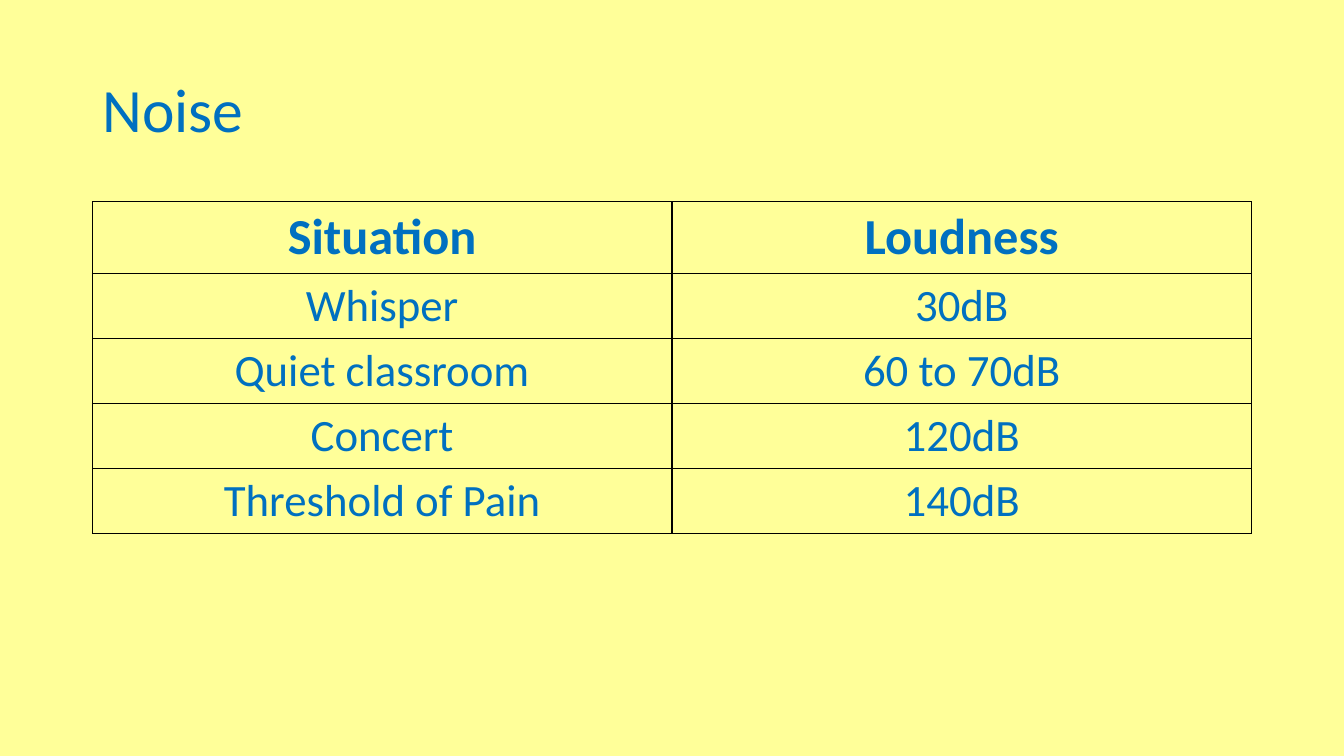
from lxml.etree import SubElement
from pptx import Presentation
from pptx.dml.color import RGBColor
from pptx.enum.text import MSO_ANCHOR, MSO_AUTO_SIZE, PP_ALIGN
from pptx.oxml.ns import qn
from pptx.util import Pt

EMU_PER_PX = 9525
COLORS = {"background": "FFFF99", "text": "0070C0", "border": "000000"}
LOUDNESS_ROWS = [
    ("Situation", "Loudness"),
    ("Whisper", "30dB"),
    ("Quiet classroom", "60 to 70dB"),
    ("Concert", "120dB"),
    ("Threshold of Pain", "140dB"),
]


def px(length):
    return length * EMU_PER_PX


class SlideBuilder:
    font = "Calibri"

    def __init__(self, deck):
        self.page = deck.slides.add_slide(deck.slide_layouts[5])
        fill = self.page.background.fill
        fill.solid()
        fill.fore_color.rgb = RGBColor.from_string(COLORS["background"])

    def add_text(self, para, text, size, align, bold=False):
        para.alignment = align
        span = para.add_run()
        span.text = text
        span.font.name = self.font
        span.font.size = Pt(size)
        span.font.bold = bold
        span.font.color.rgb = RGBColor.from_string(COLORS["text"])

    def title(self, text, left, top, width, height):
        box = self.page.shapes.title
        box.left, box.top = px(left), px(top)
        box.width, box.height = px(width), px(height)
        frame = box.text_frame
        frame.word_wrap = True
        frame.auto_size = MSO_AUTO_SIZE.NONE
        frame.vertical_anchor = MSO_ANCHOR.MIDDLE
        para = frame.paragraphs[0]
        para.line_spacing = 0.9
        self.add_text(para, text, 44, PP_ALIGN.LEFT)

    def border(self, cell):
        properties = cell._tc.get_or_add_tcPr()
        for index, side in enumerate(("lnL", "lnR", "lnT", "lnB")):
            line = SubElement(properties, qn(f"a:{side}"), w=str(Pt(1)))
            fill = SubElement(line, qn("a:solidFill"))
            SubElement(fill, qn("a:srgbClr"), val=COLORS["border"])
            properties.insert(index, line)

    def table(self, rows, left, top, width, header_height, row_height):
        heights = [header_height] + [row_height] * (len(rows) - 1)
        columns = len(rows[0])
        table = self.page.shapes.add_table(
            len(rows), columns, px(left), px(top), px(width), px(sum(heights))
        ).table
        table.first_row = False
        table.horz_banding = False
        for column in table.columns:
            column.width = px(width // columns)
        for row_index, (texts, height) in enumerate(zip(rows, heights)):
            table.rows[row_index].height = px(height)
            header = row_index == 0
            for column_index, text in enumerate(texts):
                cell = table.cell(row_index, column_index)
                cell.fill.background()
                self.border(cell)
                para = cell.text_frame.paragraphs[0]
                self.add_text(para, text, 36 if header else 32, PP_ALIGN.CENTER, header)


def main():
    deck = Presentation()
    deck.slide_width, deck.slide_height = px(1280), px(720)
    builder = SlideBuilder(deck)
    builder.title("Noise", 88, 38, 1104, 139)
    builder.table(LOUDNESS_ROWS, 88, 192, 1104, 68, 62)
    deck.save("out.pptx")


if __name__ == "__main__":
    main()
